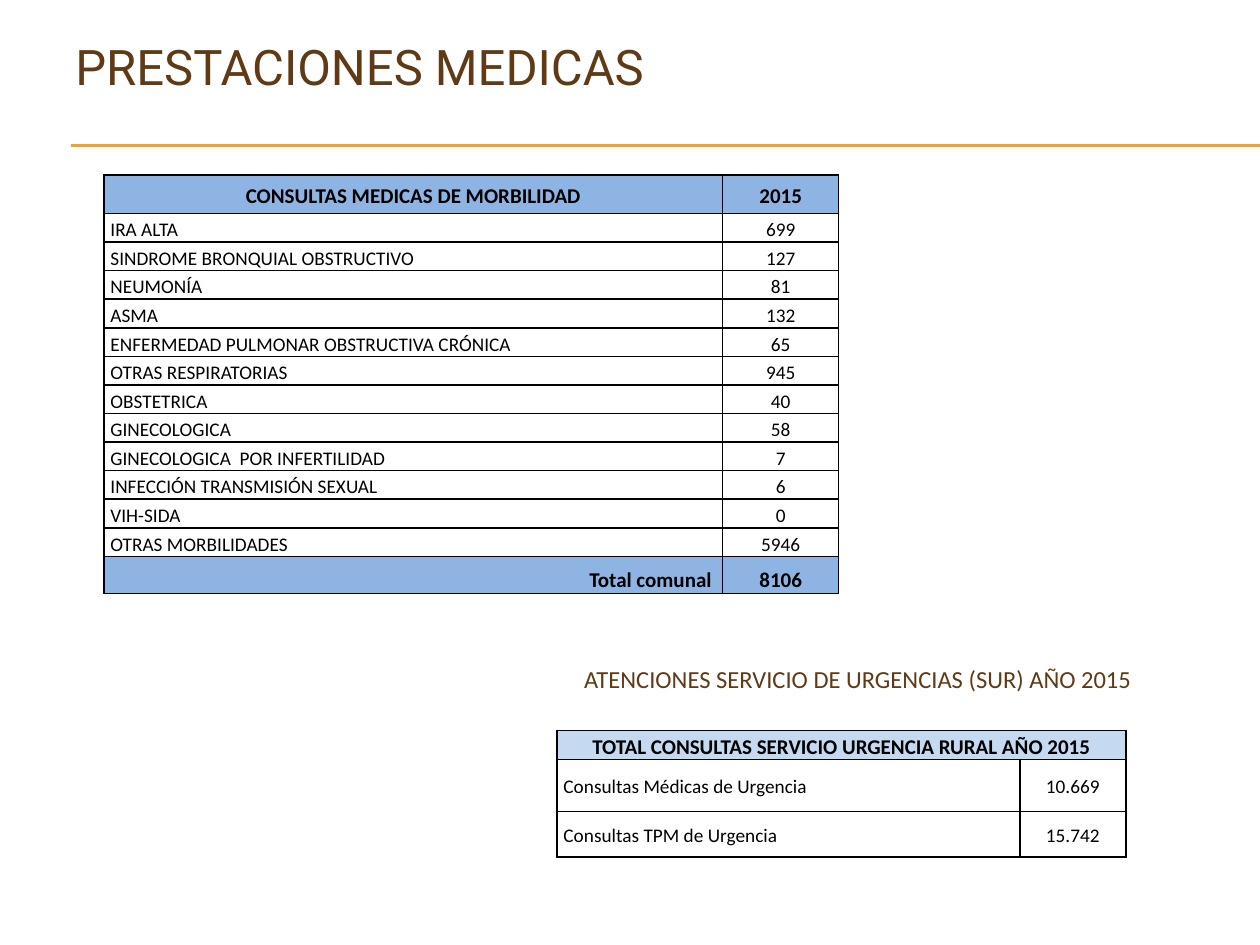
"""Builds the slide on medical consultations in 2015."""
from lxml import etree
from pptx import Presentation
from pptx.dml.color import RGBColor
from pptx.enum.shapes import MSO_CONNECTOR
from pptx.enum.text import MSO_ANCHOR, PP_ALIGN
from pptx.oxml.ns import qn
from pptx.util import Pt

LEFT, CENTER, RIGHT = PP_ALIGN.LEFT, PP_ALIGN.CENTER, PP_ALIGN.RIGHT
TOP, MIDDLE, BOTTOM = MSO_ANCHOR.TOP, MSO_ANCHOR.MIDDLE, MSO_ANCHOR.BOTTOM
STRAIGHT = MSO_CONNECTOR.STRAIGHT
COLORS = {
    "brown": "603A14", "gold": "F0A22E", "black": "000000",
    "white": "FFFFFF", "blue": "8DB4E2", "pale": "C5D9F1",
}


def write(frame, text, size, color, font="Calibri", bold=False, align=LEFT):
    par = frame.paragraphs[0]
    par.alignment = align
    run = par.add_run()
    run.text = text
    run.font.size = Pt(size)
    run.font.name = font
    run.font.bold = bold
    run.font.color.rgb = RGBColor.from_string(COLORS[color])
    return par


def style(cell, fill):
    props = cell._tc.get_or_add_tcPr()
    for side in ("lnL", "lnR", "lnT", "lnB"):
        line = etree.SubElement(props, qn("a:" + side), w=str(Pt(1)))
        solid = etree.SubElement(line, qn("a:solidFill"))
        etree.SubElement(solid, qn("a:srgbClr"), val=COLORS["black"])
    cell.fill.solid()
    cell.fill.fore_color.rgb = RGBColor.from_string(COLORS[fill])
    cell.margin_left = cell.margin_right = Pt(3.6)
    cell.margin_top = cell.margin_bottom = 0


deck = Presentation()
deck.slide_width, deck.slide_height = Pt(720), Pt(540)
slide = deck.slides.add_slide(deck.slide_layouts[6])
shapes = slide.shapes

for y in (82.8, 83.4):
    rule = shapes.add_connector(STRAIGHT, Pt(40.5), Pt(y), Pt(720), Pt(y))
    rule.line.color.rgb = RGBColor.from_string(COLORS["gold"])
    rule.line.width = Pt(0.75)
    etree.SubElement(rule._element.spPr, qn("a:effectLst"))

heads = [
    ("PRESTACIONES MEDICAS", 28, "Roboto", LEFT, (36, 21, 648, 61), 0),
    ("ATENCIONES SERVICIO DE URGENCIAS (SUR) AÑO 2015", 14, "Calibri", CENTER,
     (303, 376, 374.5, 46), 3.6),
]
for text, size, font, align, spot, inset in heads:
    frame = shapes.add_textbox(*map(Pt, spot)).text_frame
    frame.word_wrap = True
    frame.vertical_anchor = TOP
    frame.margin_top = Pt(inset)
    write(frame, text, size, "brown", font, align=align)

illness = [
    ("CONSULTAS MEDICAS DE MORBILIDAD", "2015"),
    ("IRA ALTA", "699"),
    ("SINDROME BRONQUIAL OBSTRUCTIVO", "127"),
    ("NEUMONÍA", "81"),
    ("ASMA", "132"),
    ("ENFERMEDAD PULMONAR OBSTRUCTIVA CRÓNICA", "65"),
    ("OTRAS RESPIRATORIAS", "945"),
    ("OBSTETRICA", "40"),
    ("GINECOLOGICA", "58"),
    ("GINECOLOGICA  POR INFERTILIDAD", "7"),
    ("INFECCIÓN TRANSMISIÓN SEXUAL", "6"),
    ("VIH-SIDA", "0"),
    ("OTRAS MORBILIDADES", "5946"),
    ("Total comunal ", "8106"),
]
urgent = [
    ("TOTAL CONSULTAS SERVICIO URGENCIA RURAL AÑO 2015", ""),
    ("Consultas Médicas de Urgencia", "10.669"),
    ("Consultas TPM de Urgencia", "15.742"),
]
tables = [
    (illness, 59.5, 100, (353.5, 66.3), [22] + [16.35] * 12 + [21.3], "blue", BOTTOM),
    (urgent, 318.4, 417.4, (264.4, 60.6), [16.6, 29.6, 26.2], "pale", MIDDLE),
]
for rows, x, y, widths, heights, tint, anchor in tables:
    grid = shapes.add_table(len(rows), 2, Pt(x), Pt(y), Pt(sum(widths)),
                            Pt(sum(heights))).table
    grid.first_row = grid.horz_banding = False
    for col, width in zip(grid.columns, widths):
        col.width = Pt(width)
    for r, (row, height) in enumerate(zip(rows, heights)):
        grid.rows[r].height = Pt(height)
        total = row[0].startswith("Total ")
        strong = r == 0 or total
        for c, text in enumerate(row):
            cell = grid.cell(r, c)
            style(cell, tint if strong else "white")
            cell.vertical_anchor = MIDDLE if r == 0 else anchor
            if text:
                align = CENTER if c or r == 0 else RIGHT if total else LEFT
                par = write(cell.text_frame, text, 12 if strong else 11,
                            "black", bold=strong, align=align)
                par.line_spacing = 1.15
    if not rows[0][1]:
        grid.cell(0, 0).merge(grid.cell(0, 1))

deck.save("out.pptx")
